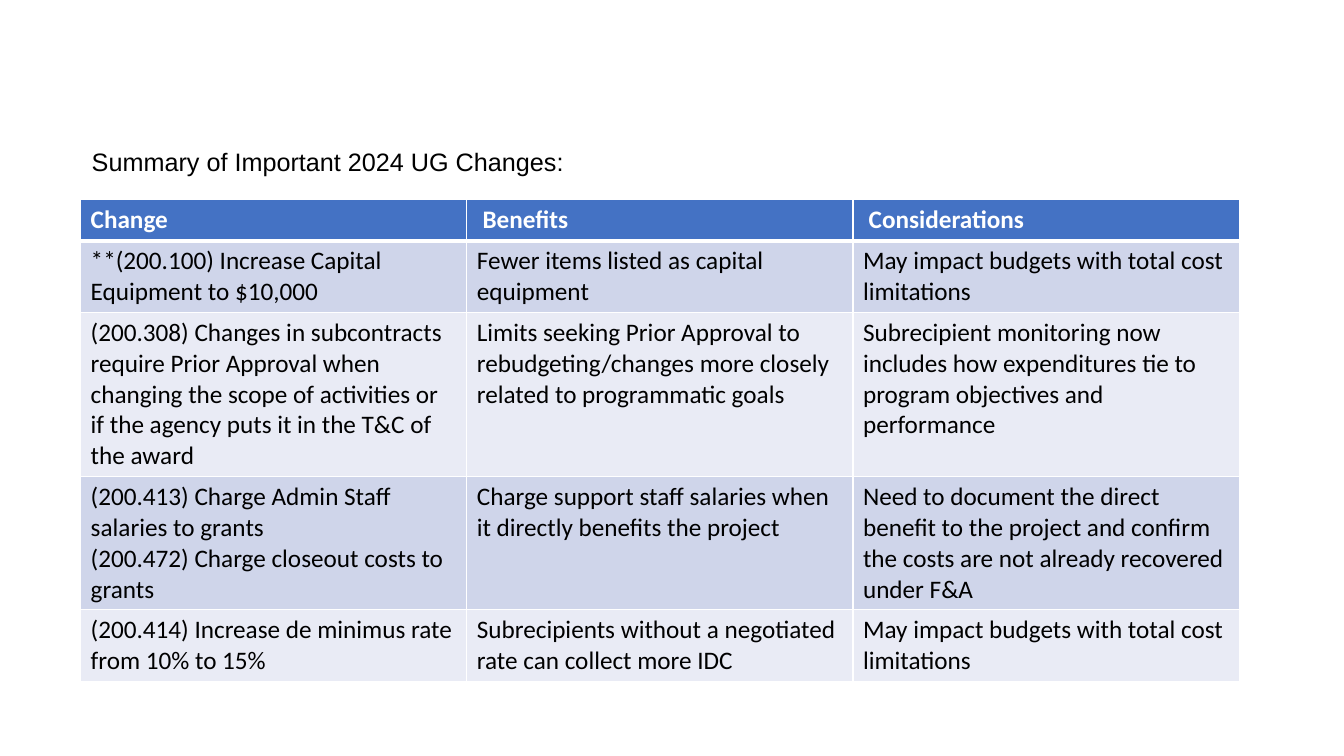
import pptx
import pptx.util
import pptx.dml.color
import pptx.enum.text
import pptx.oxml
import pptx.oxml.ns
from pptx.util import Inches

COLORS = {
    "header": "4472C4",
    "band_dark": "CFD5EA",
    "band_light": "E9EBF5",
    "white": "FFFFFF",
    "black": "000000",
}

HEADINGS = ["Change", " Benefits", " Considerations"]
CHANGES = [
    ["**(200.100) Increase Capital Equipment to $10,000",
     "Fewer items listed as capital equipment",
     "May impact budgets with total cost limitations"],
    ["(200.308) Changes in subcontracts require Prior Approval when changing "
     "the scope of activities or if the agency puts it in the T&C of the award",
     "Limits seeking Prior Approval to rebudgeting/changes more closely "
     "related to programmatic goals",
     "Subrecipient monitoring now includes how expenditures tie to program "
     "objectives and performance"],
    ["(200.413) Charge Admin Staff salaries to grants\n"
     "(200.472) Charge closeout costs to grants",
     "Charge support staff salaries when it directly benefits the project",
     "Need to document the direct benefit to the project and confirm the "
     "costs are not already recovered under F&A"],
    ["(200.414) Increase de minimus rate from 10% to 15%",
     "Subrecipients without a negotiated rate can collect more IDC",
     "May impact budgets with total cost limitations"],
]
ROW_HEIGHTS = [0.41, 0.71, 1.63, 1.32, 0.71]
COLUMN_WIDTH = 3.83


def rgb(name):
    return pptx.dml.color.RGBColor.from_string(COLORS[name])


def add_run(paragraph, text, font_name, color, bold=False):
    run = paragraph.add_run()
    run.text = text
    run.font.name = font_name
    run.font.size = pptx.util.Pt(18)
    run.font.bold = bold
    run.font.color.rgb = rgb(color)


def set_borders(cell, top=1, bottom=1):
    """Give the cell white borders, with widths in points."""
    properties = cell._tc.get_or_add_tcPr()
    for side, width in (("L", 1), ("R", 1), ("T", top), ("B", bottom)):
        properties.append(pptx.oxml.parse_xml(
            f'<a:ln{side} {pptx.oxml.ns.nsdecls("a")} w="{pptx.util.Pt(width)}">'
            f'<a:solidFill><a:srgbClr val="{COLORS["white"]}"/></a:solidFill>'
            f'</a:ln{side}>'))


def fill_cell(cell, text, fill, color, bold):
    cell.fill.solid()
    cell.fill.fore_color.rgb = rgb(fill)
    for index, line in enumerate(text.split("\n")):
        frame = cell.text_frame
        paragraph = frame.add_paragraph() if index else frame.paragraphs[0]
        add_run(paragraph, line, "Calibri", color, bold)


def add_heading(slide, text):
    heading = slide.shapes.title
    heading.left, heading.top = Inches(0.81), Inches(1.4)
    heading.width, heading.height = Inches(11.2), Inches(0.4)
    frame = heading.text_frame
    frame.word_wrap = True
    frame.auto_size = pptx.enum.text.MSO_AUTO_SIZE.SHAPE_TO_FIT_TEXT
    frame.vertical_anchor = pptx.enum.text.MSO_ANCHOR.TOP
    paragraph = frame.paragraphs[0]
    paragraph.alignment = pptx.enum.text.PP_ALIGN.LEFT
    add_run(paragraph, text, "Arial", "black")


def add_changes_table(slide):
    rows = [HEADINGS] + CHANGES
    table = slide.shapes.add_table(
        len(rows), len(HEADINGS), Inches(0.8), Inches(1.98),
        Inches(COLUMN_WIDTH * len(HEADINGS)), Inches(sum(ROW_HEIGHTS))).table
    for column in table.columns:
        column.width = Inches(COLUMN_WIDTH)
    for r, texts in enumerate(rows):
        table.rows[r].height = Inches(ROW_HEIGHTS[r])
        is_header = r == 0
        band = "band_dark" if r % 2 else "band_light"
        for c, text in enumerate(texts):
            cell = table.cell(r, c)
            set_borders(cell, top=3 if r == 1 else 1, bottom=3 if is_header else 1)
            fill_cell(cell, text, "header" if is_header else band,
                      "white" if is_header else "black", is_header)


def main():
    presentation = pptx.Presentation()
    presentation.slide_width = Inches(13.33)
    presentation.slide_height = Inches(7.5)
    slide = presentation.slides.add_slide(presentation.slide_layouts[5])
    add_changes_table(slide)
    add_heading(slide, "Summary of Important 2024 UG Changes:")
    presentation.save("out.pptx")


if __name__ == "__main__":
    main()
